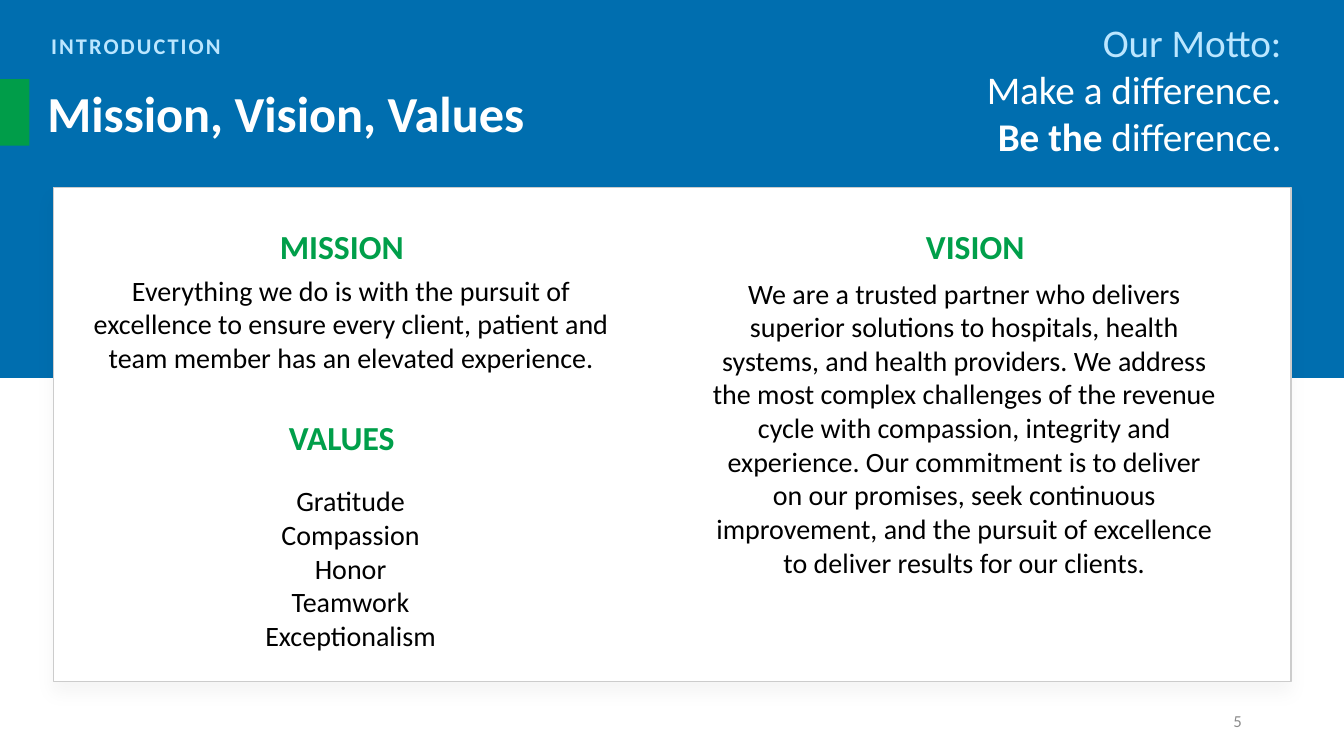
from dataclasses import dataclass

from lxml import etree
from pptx import Presentation
from pptx.dml.color import RGBColor
from pptx.enum.shapes import MSO_SHAPE
from pptx.enum.text import MSO_ANCHOR, MSO_AUTO_SIZE, PP_ALIGN
from pptx.oxml.ns import qn
from pptx.util import Pt

RECTANGLE, ROUNDED = MSO_SHAPE.RECTANGLE, MSO_SHAPE.ROUNDED_RECTANGLE
TOP, MIDDLE = MSO_ANCHOR.TOP, MSO_ANCHOR.MIDDLE
LEFT, CENTER, RIGHT = PP_ALIGN.LEFT, PP_ALIGN.CENTER, PP_ALIGN.RIGHT
NO_AUTOFIT = MSO_AUTO_SIZE.NONE


@dataclass(frozen=True)
class Theme:
    """Colours, typeface and type sizes of the slide."""
    font: str = "Calibri"
    band: str = "006EAF"
    marker: str = "009D49"
    heading: str = "009F4A"
    pale: str = "BBE6FF"
    white: str = "FFFFFF"
    black: str = "000000"
    border: str = "CCCCCC"
    number: str = "8C8C8C"
    title_size: int = 36
    motto_size: int = 28
    heading_size: int = 24
    body_size: int = 20
    kicker_size: int = 16
    number_size: int = 12


THEME = Theme()

MISSION = ("Everything we do is with the pursuit of excellence to ensure every client, "
           "patient and team member has an elevated experience.")
VISION = ("We are a trusted partner who delivers superior solutions to hospitals, health "
          "systems, and health providers. We address the most complex challenges of the "
          "revenue cycle with compassion, integrity and experience. Our commitment is to "
          "deliver on our promises, seek continuous improvement, and the pursuit of "
          "excellence to deliver results for our clients.")
VALUES = ["Gratitude", "Compassion", "Honor", "Teamwork", "Exceptionalism"]


def points(*lengths):
    """Convert numbers to point lengths."""
    return [Pt(length) for length in lengths]


def write(frame, lines, size, align=LEFT, anchor=TOP, wrap=True):
    """Fill a frame with lines, each a list of (text, colour, bold) runs."""
    frame.auto_size = NO_AUTOFIT
    frame.word_wrap = wrap
    frame.vertical_anchor = anchor
    for index, line in enumerate(lines):
        paragraph = frame.add_paragraph() if index else frame.paragraphs[0]
        paragraph.alignment = align
        for text, colour, bold in line:
            run = paragraph.add_run()
            run.text = text
            run.font.name = THEME.font
            run.font.size = Pt(size)
            run.font.bold = bold
            run.font.color.rgb = RGBColor.from_string(colour)


def add_label(slide, box, lines, size, **layout):
    """Place a text box and return its frame."""
    frame = slide.shapes.add_textbox(*points(*box)).text_frame
    write(frame, lines, size, **layout)
    return frame


def add_block(slide, box, colour):
    """Place a plain rectangle without outline or shadow."""
    block = slide.shapes.add_shape(RECTANGLE, *points(*box))
    block.shadow.inherit = False
    block.fill.solid()
    block.fill.fore_color.rgb = RGBColor.from_string(colour)
    block.line.fill.background()
    return block


def add_card(slide, box):
    """Place the white card with its border and soft shadow."""
    card = add_block(slide, box, THEME.white)
    card.line.color.rgb = RGBColor.from_string(THEME.border)
    card.line.width = Pt(1)
    effects = card._element.spPr.find(qn("a:effectLst"))
    shadow = etree.SubElement(effects, qn("a:outerShdw"), blurRad=str(Pt(12)),
                              dist=str(Pt(8)), dir="5400000", rotWithShape="0")
    tint = etree.SubElement(shadow, qn("a:srgbClr"), val=THEME.black)
    etree.SubElement(tint, qn("a:alpha"), val="4000")


def add_statement(slide, box, lines, corner=0.167, space_below=0):
    """Place centred body text in an unfilled rounded shape."""
    statement = slide.shapes.add_shape(ROUNDED, *points(*box))
    statement.shadow.inherit = False
    statement.adjustments[0] = corner
    statement.fill.background()
    statement.line.fill.background()
    frame = statement.text_frame
    frame.margin_bottom = Pt(3.6 + space_below)
    write(frame, [[(line, THEME.black, False)] for line in lines],
          THEME.body_size, align=CENTER, anchor=MIDDLE)


def build_header(slide, box):
    """Build the blue band with kicker, title and motto."""
    left, top, width, _ = box
    add_block(slide, box, THEME.band)
    add_block(slide, (left, top + 56.5, 21, 47.5), THEME.marker)

    title = slide.shapes.title
    title.left, title.top, title.width, title.height = points(left + 26.6, top + 55.4, 464.4, 51.1)
    write(title.text_frame, [[("Mission, Vision, Values", THEME.white, True)]], THEME.title_size)

    kicker = add_label(slide, (left + 29.5, top + 19.6, 139, 26.6),
                       [[("INTRODUCTION", THEME.pale, True)]],
                       THEME.kicker_size, anchor=MIDDLE, wrap=False)
    kicker.paragraphs[0].runs[0].font._element.set("spc", "150")

    motto = [[("Our Motto:", THEME.pale, False)],
             [("Make a difference.", THEME.white, False)],
             [("Be the ", THEME.white, True), ("difference.", THEME.white, False)]]
    add_label(slide, (left + width - 263, top + 9.4, 225.4, 108.7), motto,
              THEME.motto_size, align=RIGHT)


def build_content(slide, box):
    """Build the card with the mission, values and vision."""
    left, top, _, _ = box
    add_card(slide, box)
    add_statement(slide, (left + 6.5, top + 59, 412.6, 100.8), [MISSION], space_below=24)
    add_statement(slide, (left + 450.7, top + 59.8, 400.3, 223.2), [VISION], corner=0.175)
    add_statement(slide, (left - 1.4, top + 195.8, 427.7, 151.9), VALUES)
    headings = [("MISSION", 154.8, 23.8, 103.7),
                ("VISION", 616.3, 23.8, 85),
                ("VALUES", 161.3, 160.6, 90)]
    for heading, across, down, width in headings:
        add_label(slide, (left + across, top + down, width, 36),
                  [[(heading, THEME.heading, True)]], THEME.heading_size, wrap=False)


def build_page_number(slide, box):
    """Place the page number at the foot of the slide."""
    add_label(slide, box, [[("5", THEME.number, False)]], THEME.number_size,
              align=RIGHT, anchor=MIDDLE)


def main():
    """Build and save the slide."""
    deck = Presentation()
    deck.slide_width, deck.slide_height = points(960, 540)
    slide = deck.slides.add_slide(deck.slide_layouts[5])
    build_header(slide, (0, 0, 960, 270))
    build_content(slide, (38, 133.9, 884.2, 352.8))
    build_page_number(slide, (678.2, 500.4, 216, 28.8))
    title = slide.shapes.title._element
    title.getparent().append(title)
    deck.save("out.pptx")


if __name__ == "__main__":
    main()
